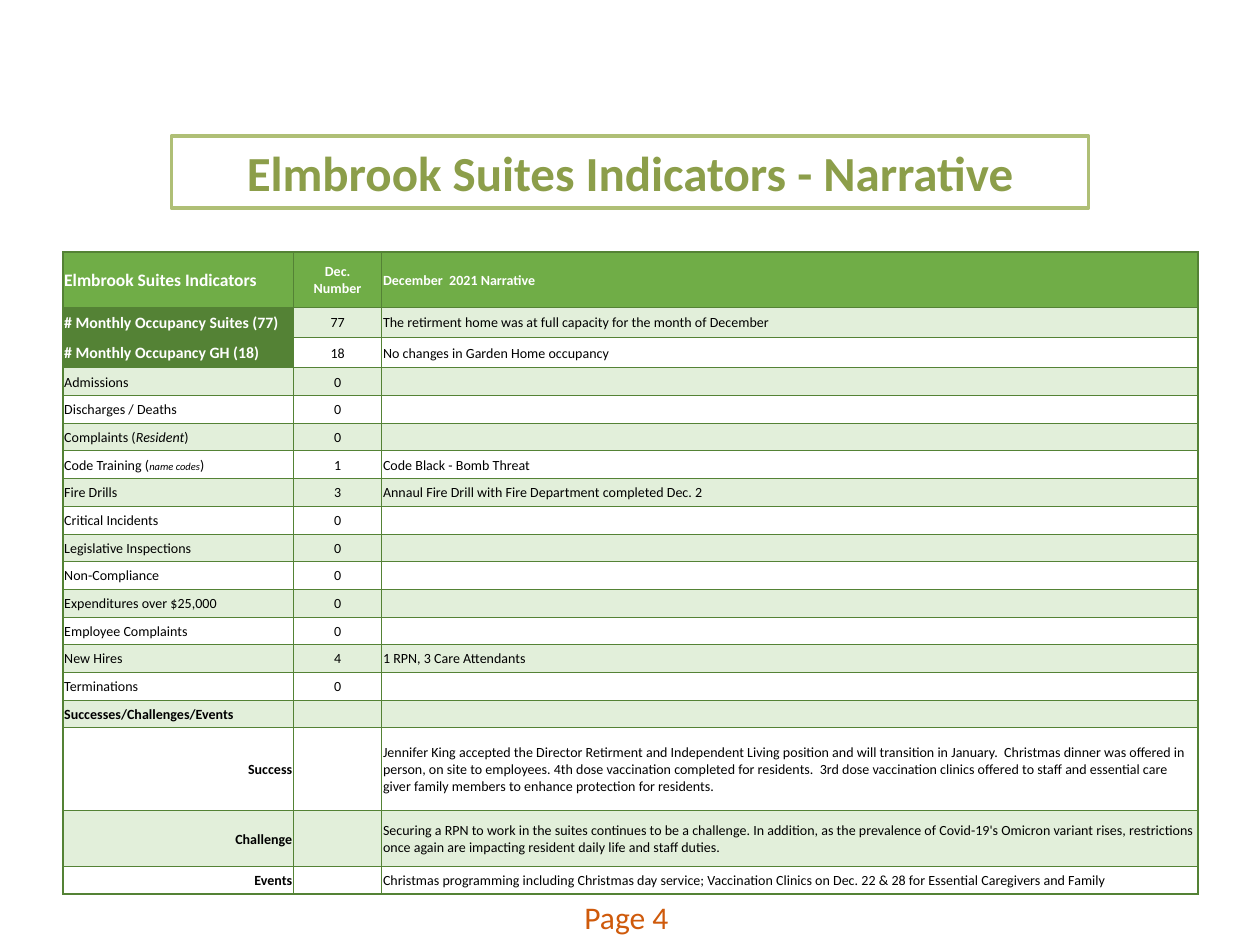
from lxml import etree
from pptx import Presentation
from pptx.dml.color import RGBColor
from pptx.enum.text import MSO_ANCHOR, MSO_AUTO_SIZE, PP_ALIGN
from pptx.oxml.ns import qn
from pptx.util import Inches, Pt

MIDDLE = MSO_ANCHOR.MIDDLE
NO_AUTOFIT = MSO_AUTO_SIZE.NONE
LEFT, CENTER, RIGHT = PP_ALIGN.LEFT, PP_ALIGN.CENTER, PP_ALIGN.RIGHT

COLORS = {
    "header": "70AD47", "dark": "548235", "band": "E2EFDA",
    "white": "FFFFFF", "black": "000000",
    "title": "8C9E4A", "title_line": "AFBF76", "page": "CF5A0B",
}


def set_font(font, size, color, bold=False):
    font.name = "Calibri"
    font.size = Pt(size)
    font.bold = bold
    font.color.rgb = RGBColor.from_string(COLORS[color])


def set_borders(cell, widths):
    """Draw the left, right, top and bottom borders, widths in points."""
    properties = cell._tc.get_or_add_tcPr()
    for side, width in zip("LRTB", widths):
        line = etree.SubElement(properties, qn(f"a:ln{side}"), w=str(Pt(width)))
        fill = etree.SubElement(line, qn("a:solidFill"))
        etree.SubElement(fill, qn("a:srgbClr"), val=COLORS["dark"])


prs = Presentation()
prs.slide_width = Inches(10)
prs.slide_height = Inches(7.5)
slide = prs.slides.add_slide(prs.slide_layouts[5])

# Title in its frame
title = slide.shapes.title
title.left, title.top = Inches(1.36), Inches(1.08)
title.width, title.height = Inches(7.28), Inches(0.57)
title.fill.solid()
title.fill.fore_color.rgb = RGBColor.from_string(COLORS["white"])
title.line.color.rgb = RGBColor.from_string(COLORS["title_line"])
title.line.width = Pt(2)
title.text_frame.text = "Elmbrook Suites Indicators - Narrative"
title.text_frame.auto_size = NO_AUTOFIT
title.text_frame.vertical_anchor = MIDDLE
heading = title.text_frame.paragraphs[0]
heading.alignment = CENTER
set_font(heading.font, 28, "title", True)

# Page number
page = slide.shapes.add_textbox(Inches(4.54), Inches(7.08), Inches(2.33), Inches(0.4))
page.text_frame.word_wrap = True
page.text_frame.text = "Page 4"
set_font(page.text_frame.paragraphs[0].font, 18, "page")

# Indicator table: label, December number, narrative
INDICATORS = [
    ("Elmbrook Suites Indicators", "Dec.\vNumber", "December  2021 Narrative"),
    ("# Monthly Occupancy Suites (77)", "77",
     "The retirment home was at full capacity for the month of December"),
    ("# Monthly Occupancy GH (18)", "18", "No changes in Garden Home occupancy"),
    ("Admissions", "0", ""),
    ("Discharges / Deaths", "0", ""),
    ("Complaints (|Resident|)", "0", ""),
    ("Code Training (|name codes|)", "1", "Code Black - Bomb Threat"),
    ("Fire Drills", "3", "Annaul Fire Drill with Fire Department completed Dec. 2"),
    ("Critical Incidents", "0", ""),
    ("Legislative Inspections", "0", ""),
    ("Non-Compliance", "0", ""),
    ("Expenditures over $25,000", "0", ""),
    ("Employee Complaints", "0", ""),
    ("New Hires", "4", "1 RPN, 3 Care Attendants"),
    ("Terminations", "0", ""),
    ("Successes/Challenges/Events", "", ""),
    ("Success", "",
     "Jennifer King accepted the Director Retirment and Independent Living position "
     "and will transition in January.  Christmas dinner was offered in person, on site "
     "to employees. 4th dose vaccination completed for residents.  3rd dose vaccination "
     "clinics offered to staff and essential care giver family members to enhance "
     "protection for residents."),
    ("Challenge", "",
     "Securing a RPN to work in the suites continues to be a challenge. In addition, as "
     "the prevalence of Covid-19's Omicron variant rises, restrictions once again are "
     "impacting resident daily life and staff duties."),
    ("Events", "",
     "Christmas programming including Christmas day service; Vaccination Clinics on "
     "Dec. 22 & 28 for Essential Caregivers and Family"),
]
COLUMN_WIDTHS = [1.83, 0.7, 6.48]
ROW_HEIGHTS = [0.44, 0.24, 0.24] + [0.22] * 13 + [0.66, 0.44, 0.22]
OCCUPANCY_ROWS = (1, 2)
FIRST_BOLD_ROW = 15
FIRST_STORY_ROW = 16
ITALIC_SIZES = {"Resident": 8, "name codes": 6}
last_row, last_col = len(INDICATORS) - 1, len(COLUMN_WIDTHS) - 1

table = slide.shapes.add_table(
    len(INDICATORS), len(COLUMN_WIDTHS),
    Inches(0.5), Inches(2), Inches(9), Inches(5.08)).table
table.first_row = table.horz_banding = False
for column, width in zip(table.columns, COLUMN_WIDTHS):
    column.width = Inches(width)
for row, height in zip(table.rows, ROW_HEIGHTS):
    row.height = Inches(height)

for r, indicator in enumerate(INDICATORS):
    for c, text in enumerate(indicator):
        cell = table.cell(r, c)
        cell.margin_left = cell.margin_right = cell.margin_top = Inches(0.01)
        cell.margin_bottom = 0
        cell.vertical_anchor = MIDDLE
        set_borders(cell, [1 if edge else 0.5 for edge in
                           (c == 0, c == last_col, r == 0, r == last_row)])

        # Look of the cell by its row and column
        size, color, bold, fill = 8, "black", False, "band" if r % 2 else None
        if r == 0:
            size, color, bold, fill = 10 if c == 0 else 8, "white", True, "header"
        elif c == 0 and r in OCCUPANCY_ROWS:
            size, color, bold, fill = 9, "white", True, "dark"
        elif c == 0 and r >= FIRST_BOLD_ROW:
            bold = True
        if fill:
            cell.fill.solid()
            cell.fill.fore_color.rgb = RGBColor.from_string(COLORS[fill])
        else:
            cell.fill.background()

        paragraph = cell.text_frame.paragraphs[0]
        if c == 1:
            paragraph.alignment = CENTER
        elif c == 0 and r >= FIRST_STORY_ROW:
            paragraph.alignment = RIGHT
        else:
            paragraph.alignment = LEFT

        # Text; the part between bars is italic
        if "|" in text:
            for part in text.split("|"):
                run = paragraph.add_run()
                run.text = part
                set_font(run.font, ITALIC_SIZES.get(part, size), color, bold)
                run.font.italic = part in ITALIC_SIZES
        elif text:
            paragraph.text = text
            set_font(paragraph.font, size, color, bold)
        else:
            # Small end mark keeps empty rows at their height
            etree.SubElement(paragraph._p, qn("a:endParaRPr"), sz="800")

prs.save("out.pptx")
